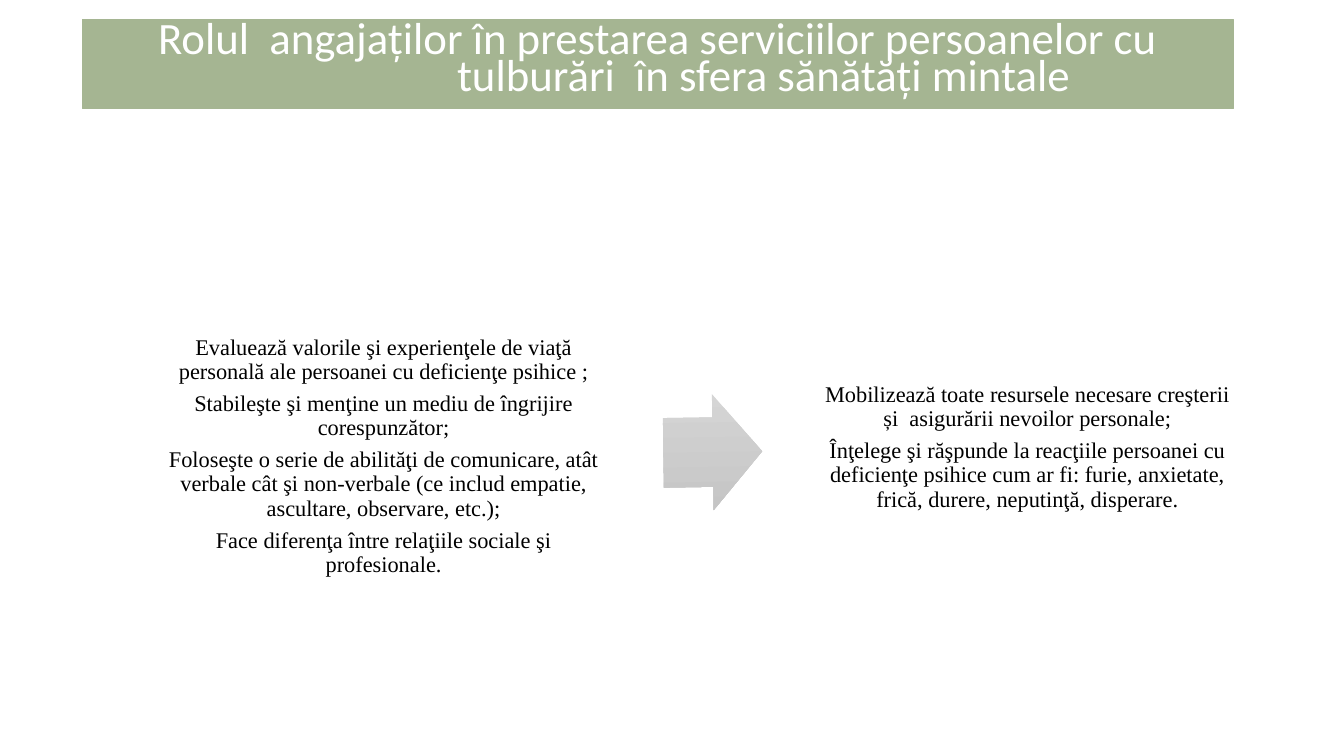
from dataclasses import dataclass

from pptx import Presentation
from pptx import util as u
from pptx.dml.color import RGBColor
from pptx.enum import shapes, text


@dataclass(frozen=True)
class Theme:
    banner: RGBColor = RGBColor.from_string("A5B592")
    white: RGBColor = RGBColor.from_string("FFFFFF")
    black: RGBColor = RGBColor.from_string("000000")
    arrow_top: RGBColor = RGBColor.from_string("D5D5D5")
    arrow_bottom: RGBColor = RGBColor.from_string("C5C5C5")
    title_font: str = "Calibri"
    title_size: int = 32
    body_font: str = "Times New Roman"
    body_size: int = 16


THEME = Theme()

TITLE_LINES = [
    "Rolul  angajaților în prestarea serviciilor persoanelor cu",
    "tulburări  în sfera sănătăți mintale",
]
ASSESSMENT_ROLES = [
    "Evaluează valorile şi experienţele de viaţă personală ale persoanei "
    "cu deficienţe psihice ;",
    "Stabileşte şi menţine un mediu de îngrijire corespunzător;",
    "Foloseşte o serie de abilităţi de comunicare, atât verbale cât şi "
    "non-verbale (ce includ empatie, ascultare, observare, etc.);",
    "Face diferenţa între relaţiile sociale şi profesionale.",
]
SUPPORT_ROLES = [
    "Mobilizează toate resursele necesare creşterii și  asigurării "
    "nevoilor personale;",
    "Înţelege şi răşpunde la reacţiile persoanei cu deficienţe psihice "
    "cum ar fi: furie, anxietate, frică, durere, neputinţă, disperare.",
]


def add_plain_shape(slide, kind, box):
    shape = slide.shapes.add_shape(kind, *map(u.Inches, box))
    shape.shadow.inherit = False
    shape.line.fill.background()
    return shape


def write_paragraphs(frame, lines, font, size, color, spacing, after=0):
    """Fill a text frame with centred paragraphs."""
    frame.word_wrap = True
    frame.text = "\n".join(lines)
    for paragraph in frame.paragraphs:
        paragraph.alignment = text.PP_ALIGN.CENTER
        paragraph.line_spacing = spacing
        paragraph.space_after = u.Pt(after)
        for run in paragraph.runs:
            run.font.name = font
            run.font.size = u.Pt(size)
            run.font.color.rgb = color


def add_title_banner(slide, box):
    banner = add_plain_shape(slide, shapes.MSO_SHAPE.RECTANGLE, box)
    banner.fill.solid()
    banner.fill.fore_color.rgb = THEME.banner
    banner.line.color.rgb = THEME.banner
    banner.line.width = u.Pt(0.5)
    frame = banner.text_frame
    frame.vertical_anchor = text.MSO_ANCHOR.TOP
    write_paragraphs(frame, TITLE_LINES, THEME.title_font, THEME.title_size,
                     THEME.white, spacing=0.7)
    # The second line is centred further to the right
    properties = frame.paragraphs[1]._p.get_or_add_pPr()
    properties.set("marL", str(u.Inches(2.1)))
    properties.set("indent", "0")


def add_role_card(slide, box, roles):
    card = add_plain_shape(slide, shapes.MSO_SHAPE.ROUNDED_RECTANGLE, box)
    card.adjustments[0] = 0.1
    card.fill.solid()
    card.fill.fore_color.rgb = THEME.white
    frame = card.text_frame
    frame.vertical_anchor = text.MSO_ANCHOR.MIDDLE
    frame.margin_left = frame.margin_right = u.Inches(0.07)
    frame.margin_top = frame.margin_bottom = u.Inches(0.07)
    write_paragraphs(frame, roles, THEME.body_font, THEME.body_size,
                     THEME.black, spacing=0.9, after=0.35 * THEME.body_size)


def add_flow_arrow(slide, box):
    arrow = add_plain_shape(slide, shapes.MSO_SHAPE.RIGHT_ARROW, box)
    arrow.adjustments[0] = 0.6
    arrow.adjustments[1] = 0.5
    arrow.rotation = 359.1
    arrow.fill.gradient()
    arrow.fill.gradient_angle = 270
    colors = (THEME.arrow_top, THEME.arrow_bottom)
    for stop, color in zip(arrow.fill.gradient_stops, colors):
        stop.color.rgb = color


def add_role_flow(slide, box):
    """Two cards at the ends of the box with an arrow between them."""
    left, top, width, height = box
    card_width, card_height = 4.61, 2.78
    add_role_card(slide, (left, top + height - card_height - 0.06,
                          card_width, card_height), ASSESSMENT_ROLES)
    add_flow_arrow(slide, (left + 5.08, top + 0.86, 0.98, 1.15))
    support_width = 4.44
    add_role_card(slide, (left + width - support_width, top,
                          support_width, card_height), SUPPORT_ROLES)


def main():
    presentation = Presentation()
    presentation.slide_width = u.Inches(13.33)
    presentation.slide_height = u.Inches(7.5)
    slide = presentation.slides.add_slide(presentation.slide_layouts[6])
    add_role_flow(slide, (1.5, 3.05, 10.91, 2.93))
    add_title_banner(slide, (0.82, 0.19, 11.41, 0.89))
    presentation.save("out.pptx")


if __name__ == "__main__":
    main()
